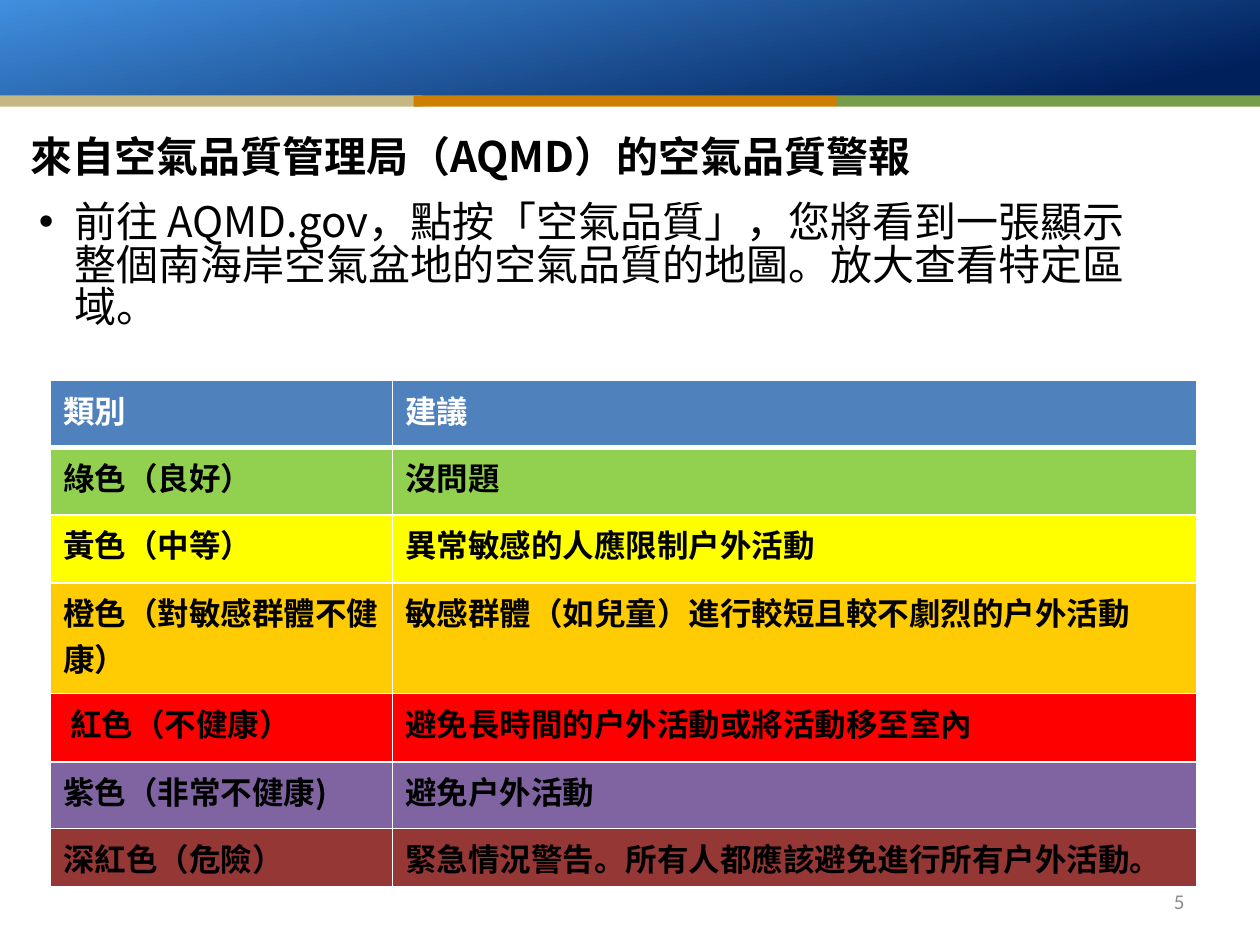
from lxml.etree import SubElement
from pptx import Presentation
from pptx.dml.color import RGBColor
from pptx.enum.shapes import MSO_SHAPE
from pptx.enum.text import MSO_ANCHOR, PP_ALIGN
from pptx.oxml.ns import qn
from pptx.util import Pt

CJK_FONT = "Noto Sans CJK TC"
BLACK = RGBColor(0x00, 0x00, 0x00)
WHITE = RGBColor(0xFF, 0xFF, 0xFF)
GRAY = RGBColor(0x8C, 0x8C, 0x8C)
NAVY = RGBColor(0x00, 0x20, 0x5B)
SKY = RGBColor(0x41, 0x8F, 0xDE)
TAN = RGBColor(0xC5, 0xB7, 0x83)
OCHRE = RGBColor(0xCF, 0x7F, 0x00)
LEAF = RGBColor(0x78, 0x9D, 0x4A)
HEADER_BLUE = RGBColor(0x4F, 0x81, 0xBD)
GREEN = RGBColor(0x92, 0xD0, 0x50)
YELLOW = RGBColor(0xFF, 0xFF, 0x00)
ORANGE = RGBColor(0xFF, 0xCB, 0x02)
RED = RGBColor(0xFF, 0x00, 0x00)
PURPLE = RGBColor(0x80, 0x64, 0xA2)
MAROON = RGBColor(0x95, 0x37, 0x35)

# Category, advice, fill, row height
ALERT_LEVELS = [
    ("類別", "建議", HEADER_BLUE, 38.2),
    ("綠色（良好）", "沒問題", GREEN, 38.6),
    ("黃色（中等）", "異常敏感的人應限制戶外活動", YELLOW, 38.9),
    ("橙色（對敏感群體不健康）", "敏感群體（如兒童）進行較短且較不劇烈的戶外活動", ORANGE, 63.4),
    (" 紅色（不健康）", "避免長時間的戶外活動或將活動移至室內", RED, 38.9),
    ("紫色（非常不健康)", "避免戶外活動", PURPLE, 38.2),
    ("深紅色（危險）", "緊急情況警告。所有人都應該避免進行所有戶外活動。", MAROON, 33.1),
]


def style_paragraph(paragraph, size, color, bold=False, name=CJK_FONT):
    font = paragraph.font
    font.name = name
    font.size = Pt(size)
    font.bold = bold
    font.color.rgb = color
    # East Asian typeface, next to the Latin one
    properties = paragraph._p.pPr.find(qn("a:defRPr"))
    SubElement(properties, qn("a:ea")).set("typeface", name)


def add_text(slide, box, text, anchor=MSO_ANCHOR.TOP):
    shape = slide.shapes.add_textbox(*(Pt(value) for value in box))
    frame = shape.text_frame
    frame.word_wrap = True
    frame.vertical_anchor = anchor
    paragraph = frame.paragraphs[0]
    paragraph.text = text
    return paragraph


def add_bar(slide, left, top, width, height):
    shape = slide.shapes.add_shape(
        MSO_SHAPE.RECTANGLE, Pt(left), Pt(top), Pt(width), Pt(height))
    shape.shadow.inherit = False
    shape.line.fill.background()
    return shape


def add_banner(slide, left, top, width, height):
    stripe_height = 6.5
    # Gradient band
    fill = add_bar(slide, left, top, width, height - stripe_height + 0.7).fill
    fill.gradient()
    fill.gradient_angle = 102
    for stop, position, color in zip(fill.gradient_stops, (0.09, 1), (NAVY, SKY)):
        stop.position = position
        stop.color.rgb = color
    # Three stripes; the outer two meet the slide edges
    stripe_width = 242
    starts = (left - 0.7, left + 236.3, left + width - stripe_width)
    for start, color in zip(starts, (TAN, OCHRE, LEAF)):
        stripe = add_bar(slide, start, top + height - stripe_height,
                         stripe_width, stripe_height)
        stripe.fill.solid()
        stripe.fill.fore_color.rgb = color


def add_title(slide, box):
    paragraph = add_text(slide, box, "來自空氣品質管理局（AQMD）的空氣品質警報",
                         MSO_ANCHOR.MIDDLE)
    style_paragraph(paragraph, 24, BLACK, bold=True)


def add_body(slide, box):
    paragraph = add_text(
        slide, box,
        "前往 AQMD.gov，點按「空氣品質」，您將看到一張顯示"
        "整個南海岸空氣盆地的空氣品質的地圖。放大查看特定區域。")
    paragraph.line_spacing = 0.84
    # Bullet with hanging indent
    properties = paragraph._p.get_or_add_pPr()
    properties.set("marL", str(Pt(20.25)))
    properties.set("indent", str(-Pt(20.25)))
    SubElement(properties, qn("a:buFont")).set("typeface", "Arial")
    SubElement(properties, qn("a:buChar")).set("char", "•")
    style_paragraph(paragraph, 24, BLACK)


def set_borders(cell, top, bottom):
    properties = cell._tc.get_or_add_tcPr()
    for side, width in (("L", 1), ("R", 1), ("T", top), ("B", bottom)):
        line = SubElement(properties, qn(f"a:ln{side}"), w=str(Pt(width)))
        fill = SubElement(line, qn("a:solidFill"))
        SubElement(fill, qn("a:srgbClr")).set("val", str(WHITE))


def add_alert_table(slide, left, top, width, height):
    table = slide.shapes.add_table(
        len(ALERT_LEVELS), 2, Pt(left), Pt(top), Pt(width), Pt(height)).table
    category_width = 195.6
    table.columns[0].width = Pt(category_width)
    table.columns[1].width = Pt(width - category_width)
    for index, (category, advice, color, row_height) in enumerate(ALERT_LEVELS):
        row = table.rows[index]
        row.height = Pt(row_height)
        for cell, text in zip(row.cells, (category, advice)):
            # Heavy rule between header and levels
            set_borders(cell, top=3 if index == 1 else 1,
                        bottom=3 if index == 0 else 1)
            cell.fill.solid()
            cell.fill.fore_color.rgb = color
            cell.text = text
            style_paragraph(cell.text_frame.paragraphs[0], 18,
                            WHITE if index == 0 else BLACK, bold=True)


def add_slide_number(slide, box):
    paragraph = add_text(slide, box, "5", MSO_ANCHOR.MIDDLE)
    paragraph.alignment = PP_ALIGN.RIGHT
    style_paragraph(paragraph, 12, GRAY, name="Calibri")


def main():
    presentation = Presentation()
    presentation.slide_width = Pt(720)
    presentation.slide_height = Pt(540)
    slide = presentation.slides.add_slide(presentation.slide_layouts[6])
    add_banner(slide, 0, 0, 720, 61)
    add_title(slide, (10.1, 64.1, 702, 49.7))
    add_body(slide, (15.1, 113, 648, 91.4))
    add_slide_number(slide, (642.2, 500.4, 41.8, 28.8))
    add_alert_table(slide, 28.8, 217.4, 655.2, 289.3)
    presentation.save("out.pptx")


if __name__ == "__main__":
    main()
